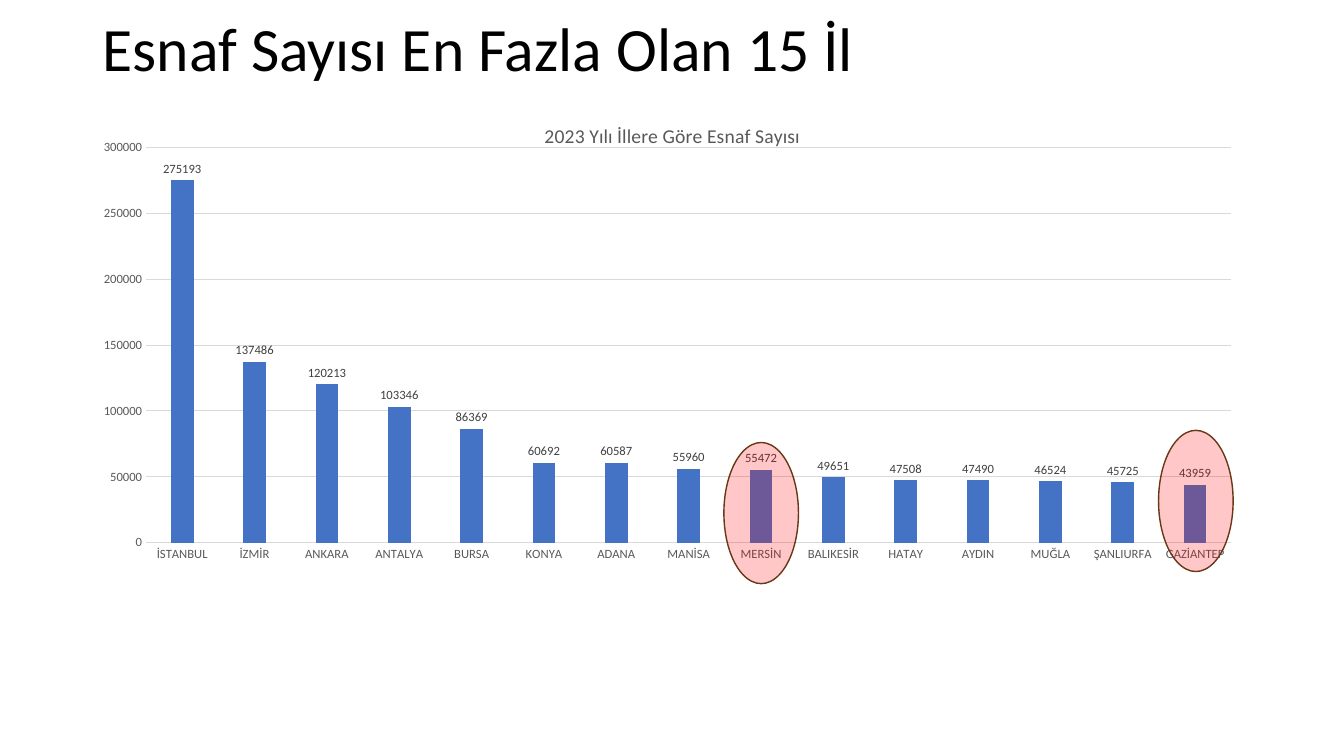
from typing import NamedTuple

from lxml.etree import SubElement
from pptx import Presentation
from pptx.chart.axis import _BaseAxis as Axis
from pptx.chart.chart import Chart
from pptx.chart.data import CategoryChartData
from pptx.dml.color import RGBColor
from pptx.enum.chart import XL_CHART_TYPE as ChartType
from pptx.enum.chart import XL_LABEL_POSITION as LabelPosition
from pptx.enum.chart import XL_TICK_MARK as TickMark
from pptx.enum.shapes import MSO_SHAPE as Preset
from pptx.enum.text import MSO_ANCHOR as Anchor
from pptx.enum.text import PP_ALIGN as Align
from pptx.oxml import parse_xml
from pptx.oxml.ns import nsdecls, qn
from pptx.slide import Slide
from pptx.text.text import Font, TextFrame
from pptx.util import Inches, Pt

WIDTH, HEIGHT = Inches(13.33), Inches(7.5)
FONT = "Calibri"
COLOURS = {
    "title": "000000", "axis": "595959", "label": "404040", "grid": "D9D9D9",
    "bar": "4472C4", "highlight": "FF0000", "outline": "683715",
}
TRADESPEOPLE = {
    "İSTANBUL": 275193, "İZMİR": 137486, "ANKARA": 120213, "ANTALYA": 103346,
    "BURSA": 86369, "KONYA": 60692, "ADANA": 60587, "MANİSA": 55960,
    "MERSİN": 55472, "BALIKESİR": 49651, "HATAY": 47508, "AYDIN": 47490,
    "MUĞLA": 46524, "ŞANLIURFA": 45725, "GAZİANTEP": 43959,
}


class Area(NamedTuple):
    """A rectangle in percent of the slide's width and height."""
    left: float
    top: float
    width: float
    height: float

    def emu(self) -> tuple[int, int, int, int]:
        return (int(self.left * WIDTH / 100), int(self.top * HEIGHT / 100),
                int(self.width * WIDTH / 100), int(self.height * HEIGHT / 100))


HEADING = Area(6.9, 0, 86.27, 13.73)
CITY_CHART = Area(6.9, 13.73, 86.27, 63.47)
HIGHLIGHTS = {
    "MERSİN": Area(53.86, 58.53, 5.55, 18.67),
    "GAZİANTEP": Area(86.2, 56.93, 5.55, 18.67),
}
PLOT_SHARES = {"x": 0.046, "y": 0.091, "w": 0.936, "h": 0.824}


def colour(name: str) -> RGBColor:
    return RGBColor.from_string(COLOURS[name])


def style_font(font: Font, size: float, tint: str) -> None:
    font.name, font.size, font.bold = FONT, Pt(size), False
    font.color.rgb = colour(tint)


def write(frame: TextFrame, text: str, *, size: float, tint: str,
          align: Align = Align.LEFT, spacing: float = 1.0) -> None:
    frame.text = text
    paragraph = frame.paragraphs[0]
    paragraph.alignment, paragraph.line_spacing = align, spacing
    style_font(paragraph.runs[0].font, size, tint)


def style_axis(axis: Axis) -> None:
    axis.major_tick_mark = axis.minor_tick_mark = TickMark.NONE
    style_font(axis.tick_labels.font, 9, "axis")


def place_plot(chart: Chart) -> None:
    """Fix the inner plot area at its shares of the chart."""
    plot_area = chart._chartSpace.find(".//" + qn("c:plotArea"))
    for automatic in plot_area.findall(qn("c:layout")):
        plot_area.remove(automatic)
    places = "".join(f'<c:{side} val="{share}"/>' for side, share in PLOT_SHARES.items())
    plot_area.insert(0, parse_xml(
        f'<c:layout {nsdecls("c")}><c:manualLayout><c:layoutTarget val="inner"/>'
        f'<c:xMode val="edge"/><c:yMode val="edge"/>{places}</c:manualLayout></c:layout>'))


def add_city_chart(slide: Slide) -> None:
    data = CategoryChartData(number_format="0")
    data.categories = list(TRADESPEOPLE)
    data.add_series("Series 1", list(TRADESPEOPLE.values()))
    chart = slide.shapes.add_chart(ChartType.COLUMN_CLUSTERED, *CITY_CHART.emu(), data).chart
    style_font(chart.font, 10, "title")
    chart.has_legend = False
    write(chart.chart_title.text_frame, "2023 Yılı İllere Göre Esnaf Sayısı",
          size=14, tint="axis", align=Align.CENTER)
    place_plot(chart)

    cities, counts = chart.category_axis, chart.value_axis
    for axis in (cities, counts):
        style_axis(axis)
    counts.minimum_scale, counts.maximum_scale, counts.major_unit = 0, 300000, 50000
    counts.tick_labels.number_format = "0"
    counts.tick_labels.number_format_is_linked = False
    counts.format.line.fill.background()
    for line in (cities.format.line, counts.major_gridlines.format.line):
        line.color.rgb, line.width = colour("grid"), Pt(0.75)

    bars = chart.plots[0]
    bars.gap_width, bars.overlap, bars.vary_by_categories = 219, -27, False
    fill = bars.series[0].format.fill
    fill.solid()
    fill.fore_color.rgb = colour("bar")
    bars.has_data_labels = True
    labels = bars.data_labels
    labels.show_value, labels.position = True, LabelPosition.OUTSIDE_END
    labels.number_format, labels.number_format_is_linked = "0", False
    style_font(labels.font, 9, "label")


def add_highlight(slide: Slide, area: Area) -> None:
    ellipse = slide.shapes.add_shape(Preset.OVAL, *area.emu())
    ellipse.shadow.inherit = False
    ellipse.fill.solid()
    ellipse.fill.fore_color.rgb = colour("highlight")
    tint = ellipse.fill._xPr.find(".//" + qn("a:srgbClr"))
    SubElement(tint, qn("a:alpha")).set("val", "22000")
    ellipse.line.color.rgb, ellipse.line.width = colour("outline"), Pt(1)


def main() -> None:
    deck = Presentation()
    deck.slide_width, deck.slide_height = WIDTH, HEIGHT
    slide = deck.slides.add_slide(deck.slide_layouts[5])
    heading = slide.shapes.title
    heading.left, heading.top, heading.width, heading.height = HEADING.emu()
    heading.text_frame.vertical_anchor = Anchor.MIDDLE
    heading.text_frame.word_wrap = True
    write(heading.text_frame, "Esnaf Sayısı En Fazla Olan 15 İl",
          size=44, tint="title", spacing=0.9)
    add_city_chart(slide)
    for area in HIGHLIGHTS.values():
        add_highlight(slide, area)
    deck.save("out.pptx")


if __name__ == "__main__":
    main()
